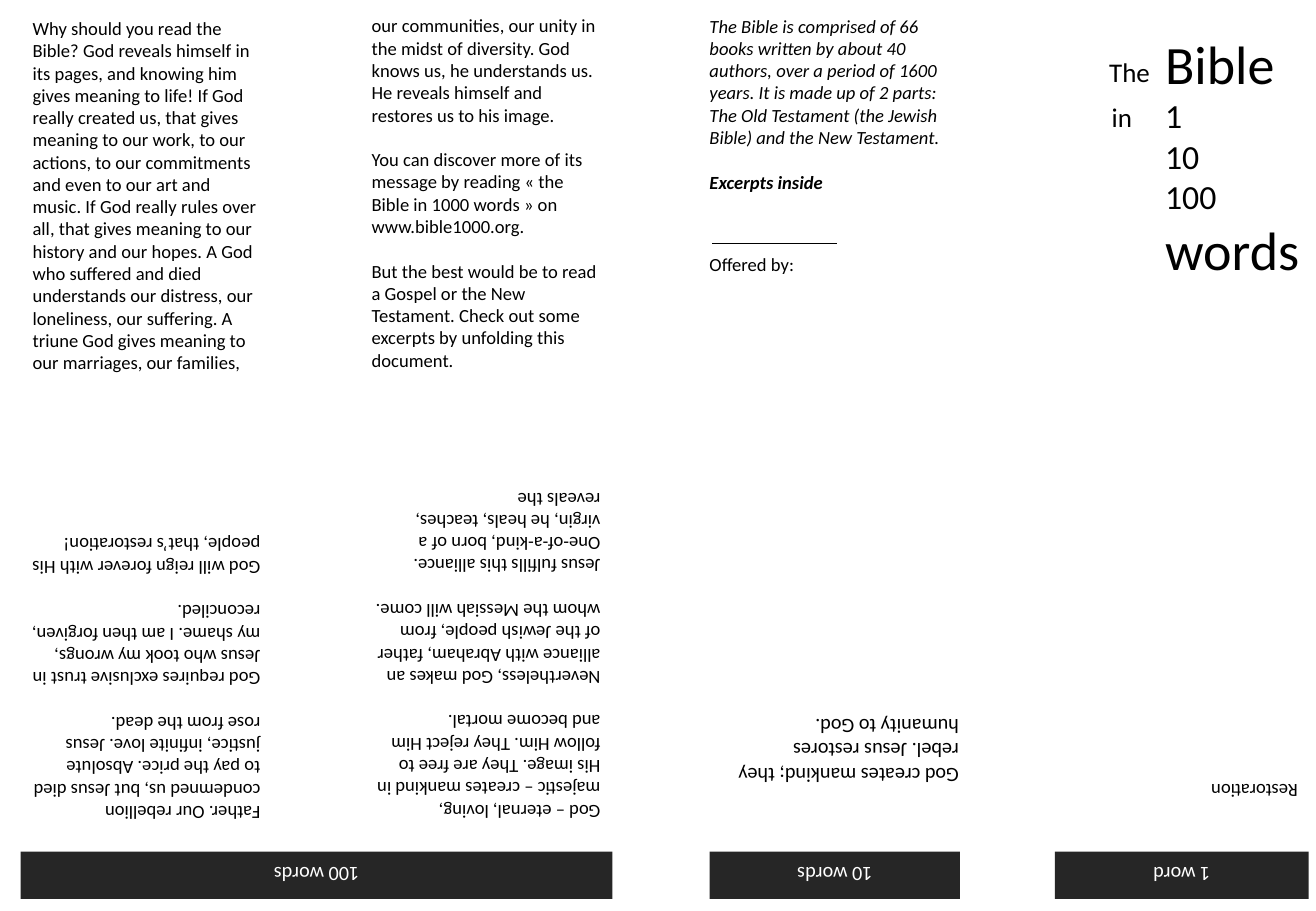
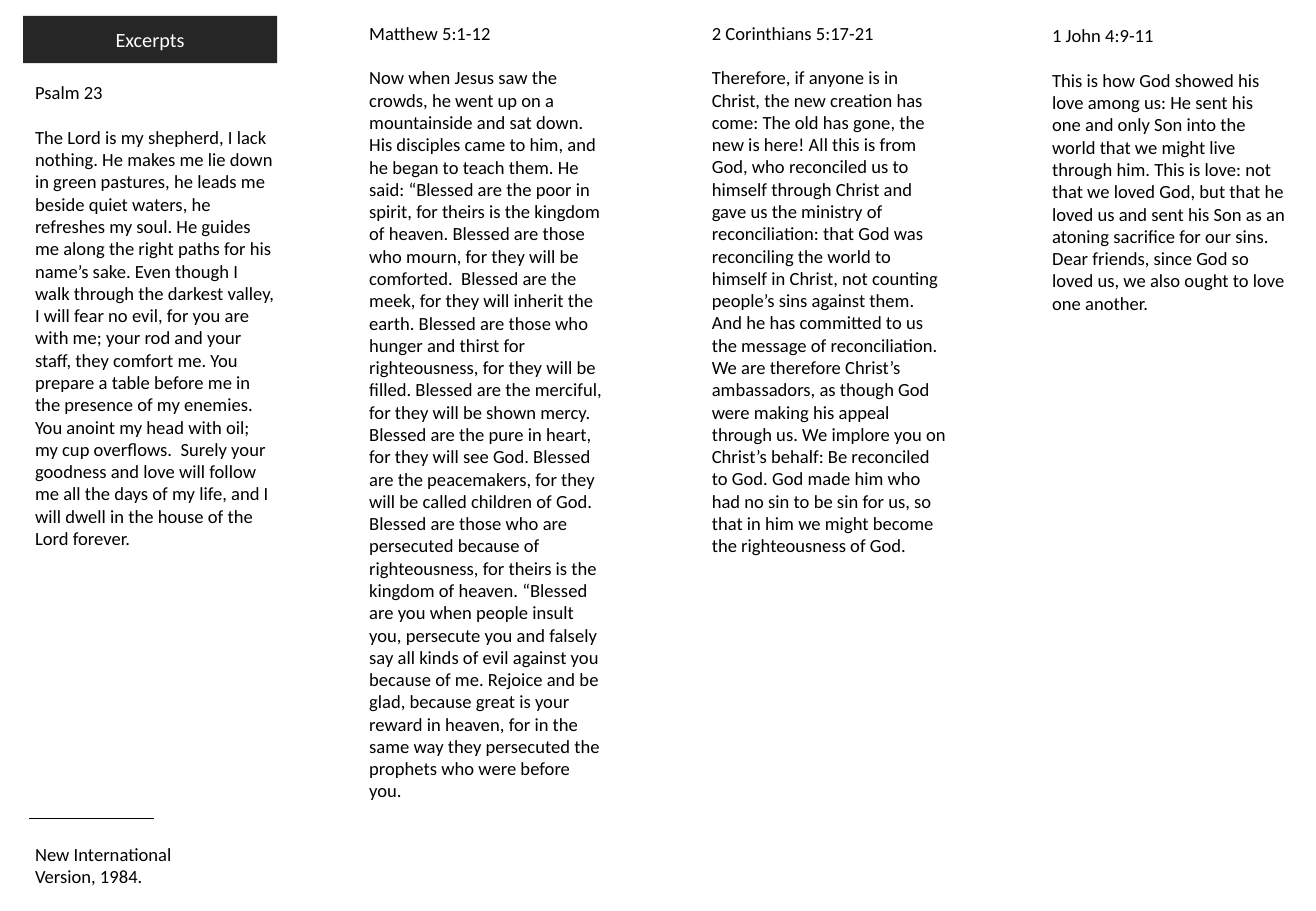
from lxml import etree
from pptx import Presentation
from pptx import util as u
from pptx.dml.color import RGBColor
from pptx.enum import shapes, text
from pptx.oxml.ns import qn

PX = 9144  # 100 px to the inch
FONT, INK, BAND, PAPER = "Calibri", "000000", "262626", "FFFFFF"
BODY, LARGE = 11, 12
GAP = 13.2  # one body line between paragraphs
BAR_W, BAR_H, RULE_W = 209, 39, 103

WHY = (
    "Why should you read the Bible? God reveals himself in its pages, and knowing him "
    "gives meaning to life! If God really created us, that gives meaning to our work, to "
    "our actions, to our commitments and even to our art and music. If God really rules "
    "over all, that gives meaning to our history and our hopes. A God who suffered and "
    "died understands our distress, our loneliness, our suffering. A triune God gives "
    "meaning to our marriages, our families,",
)
DISCOVER = (
    "our communities, our unity in the midst of diversity. God knows us, he understands "
    "us. He reveals himself and restores us to his image.",
    "You can discover more of its message by reading « the Bible in 1000 words » on\n"
    "www.bible1000.org.",
    "But the best would be to read a Gospel or the New Testament. Check out some "
    "excerpts by unfolding this document.",
)
CREATION = (
    "God – eternal, loving, majestic – creates mankind in His image. They are free to "
    "follow Him. They reject Him and become mortal.",
    "Nevertheless, God makes an alliance with Abraham, father of the Jewish people, from "
    "whom the Messiah will come.",
    "Jesus fulfills this alliance. One-of-a-kind, born of a virgin, he heals, teaches, "
    "reveals the",
)
REDEMPTION = (
    "Father. Our rebellion condemned us, but Jesus died to pay the price. Absolute "
    "justice, infinite love. Jesus rose from the dead.",
    "God requires exclusive trust in Jesus who took my wrongs, my shame. I am then "
    "forgiven, reconciled.",
    "God will reign forever with His people, that’s restoration!",
)
ABOUT = (
    "The Bible is comprised of 66 books written by about 40 authors, over a period of "
    "1600 years. It is made up of 2 parts: The Old Testament (the Jewish Bible) and the "
    "New Testament."
)
TEN_WORDS = "God creates mankind; they rebel. Jesus restores humanity to God."

PSALM = (
    "Psalm 23",
    "The Lord is my shepherd, I lack nothing. He makes me lie down in green pastures, he "
    "leads me beside quiet waters, he refreshes my soul. He guides me along the right "
    "paths for his name’s sake. Even though I walk through the darkest valley, I will "
    "fear no evil, for you are with me; your rod and your staff, they comfort me. You "
    "prepare a table before me in the presence of my enemies. You anoint my head with "
    "oil; my cup overflows.  Surely your goodness and love will follow me all the days "
    "of my life, and I will dwell in the house of the Lord forever.",
)
BEATITUDES = (
    "Now when Jesus saw the crowds, he went up on a mountainside and sat down. His "
    "disciples came to him, and he began to teach them. He said: “Blessed are the poor "
    "in spirit, for theirs is the kingdom of heaven. Blessed are those who mourn, for "
    "they will be comforted.  Blessed are the meek, for they will inherit the "
    "earth. Blessed are those who hunger and thirst for righteousness, for they will be "
    "filled. Blessed are the merciful, for they will be shown mercy. Blessed are the "
    "pure in heart, for they will see God. Blessed are the peacemakers, for they will be "
    "called children of God. "
)
PERSECUTED = (
    "Blessed are those who are persecuted because of "
    "righteousness, for theirs is the kingdom of heaven. “Blessed are you when people "
    "insult you, persecute you and falsely say all kinds of evil against you because of "
    "me. Rejoice and be glad, because great is your reward in heaven, for in the same "
    "way they persecuted the prophets who were before you."
)
MATTHEW = ("Matthew 5:1-12", [(BEATITUDES, {}), (PERSECUTED, {})])
CORINTHIANS = (
    "2 Corinthians 5:17-21",
    "Therefore, if anyone is in Christ, the new creation has come: The old has gone, the "
    "new is here! All this is from God, who reconciled us to himself through Christ and "
    "gave us the ministry of reconciliation: that God was reconciling the world to "
    "himself in Christ, not counting people’s sins against them. And he has committed to "
    "us the message of reconciliation. We are therefore Christ’s ambassadors, as though "
    "God were making his appeal through us. We implore you on Christ’s behalf: Be "
    "reconciled to God. God made him who had no sin to be sin for us, so that in him we "
    "might become the righteousness of God.",
)
JOHN = (
    "1 John 4:9-11",
    "This is how God showed his love among us: He sent his one and only Son into the "
    "world that we might live through him. This is love: not that we loved God, but that "
    "he loved us and sent his Son as an atoning sacrifice for our sins. Dear friends, "
    "since God so loved us, we also ought to love one another.",
)


def px(*lengths):
    return [u.Emu(n * PX) for n in lengths]


def rgb(value):
    return RGBColor.from_string(value)


def add_text(p, words, size=BODY, color=INK, bold=None, italic=None):
    """Add words as runs, with a break of the same size at each newline."""
    for i, line in enumerate(words.split("\n")):
        if i:
            p.add_line_break()
            etree.SubElement(p._p[-1], qn("a:rPr"), sz=str(size * 100))
        if not line:
            continue
        r = p.add_run()
        r.text = line
        f = r.font
        f.name, f.size, f.bold, f.italic = FONT, u.Pt(size), bold, italic
        f.color.rgb = rgb(color)


def text_box(parts, box, paragraphs, turned=False, gap=GAP):
    """Paragraphs are strings, or lists of (words, style) runs."""
    sp = parts.add_textbox(*px(*box))
    sp.rotation = 180 if turned else 0
    tf = sp.text_frame
    tf.word_wrap = True
    for i, runs in enumerate(paragraphs):
        p = tf.paragraphs[0]
        if i:
            p = tf.add_paragraph()
            p.space_before = u.Pt(gap)
        for words, style in [(runs, {})] if isinstance(runs, str) else runs:
            add_text(p, words, **style)


def block(s, box, words, fill, turned=False, centred=True, **style):
    sp = s.shapes.add_shape(shapes.MSO_SHAPE.RECTANGLE, *px(*box))
    sp.shadow.inherit = False
    sp.rotation = 180 if turned else 0
    sp.fill.solid()
    sp.fill.fore_color.rgb = rgb(fill)
    sp.line.fill.background()
    tf = sp.text_frame
    tf.word_wrap = True
    tf.vertical_anchor = text.MSO_ANCHOR.MIDDLE if centred else text.MSO_ANCHOR.TOP
    p = tf.paragraphs[0]
    p.alignment = text.PP_ALIGN.CENTER if centred else text.PP_ALIGN.LEFT
    add_text(p, words, **style)


def bar(s, x, y, w, words, turned=False):
    block(s, (x, y, w, BAR_H), words, BAND, turned, size=LARGE, color=PAPER)


def rule(s, x, y):
    line = s.shapes.add_connector(shapes.MSO_CONNECTOR.STRAIGHT, *px(x, y, x + RULE_W, y))
    line.line.color.rgb = rgb(INK)
    line.line.width = u.Pt(0.5)
    etree.SubElement(line._element.spPr, qn("a:effectLst"))


def cover_title(s, x, y):
    parts = s.shapes.add_group_shape().shapes
    title = [("Bible\n", {"size": 32}), ("1\n10\n100\n", {"size": 20}), ("words", {"size": 32})]
    text_box(parts, (x + 46, y, 134, 226), [title])
    for dx, dy, w, word in ((0, 21, 66, "The"), (2, 58, 64, "in")):
        text_box(parts, (x + dx, y + dy, w, 37), [[(word, {"size": 16})]])


def about_panel(s, x, y):
    italic = {"italic": True}
    text_box(s.shapes, (x, y, 211, 158),
             [[(ABOUT, italic)], [("Excerpts inside", {"bold": True, **italic})]])
    rule(s, x + 12, y + 193)
    text_box(s.shapes, (x, y + 196, 205, 29), ["Offered by:"])


def summary_strip(s, y):
    """Upside-down summaries; y is the top of their bars."""
    text_box(s.shapes, (16, y - 268, 208, 251), REDEMPTION, turned=True)
    text_box(s.shapes, (296, y - 287, 208, 269), CREATION, turned=True)
    text_box(s.shapes, (584, y - 118, 215, 71), [[(TEN_WORDS, {"size": LARGE})]], turned=True)
    block(s, (869, y - 64, BAR_W, 29), "Restoration", PAPER, turned=True, centred=False)
    for x, w, label in ((17, 487, "100 words"), (584, 206, "10 words"), (868, BAR_W, "1 word")):
        bar(s, x, y, w, label, turned=True)


def outer_side(s):
    text_box(s.shapes, (17, 9, 207, 306), WHY)
    text_box(s.shapes, (296, 7, 205, 306), DISCOVER)
    about_panel(s, 574, 7)
    cover_title(s, 903, 20)
    summary_strip(s, 701)


def inner_side(s):
    bar(s, 19, 13, BAR_W, "Excerpts")
    # Scripture columns
    for box, passage in (
        ((19, 62, 217, 399), PSALM),
        ((294, 13, 214, 658), MATTHEW),
        ((576, 13, 214, 454), CORINTHIANS),
        ((856, 15, 212, 251), JOHN),
    ):
        text_box(s.shapes, box, passage)
    # Translation credit
    rule(s, 24, 674)
    text_box(s.shapes, (19, 689, 233, 47), ("New International", "Version, 1984."), gap=0)


def main():
    prs = Presentation()
    prs.slide_width, prs.slide_height = px(1083, 750)
    for build in (outer_side, inner_side):
        build(prs.slides.add_slide(prs.slide_layouts[6]))
    prs.save("out.pptx")


if __name__ == "__main__":
    main()
